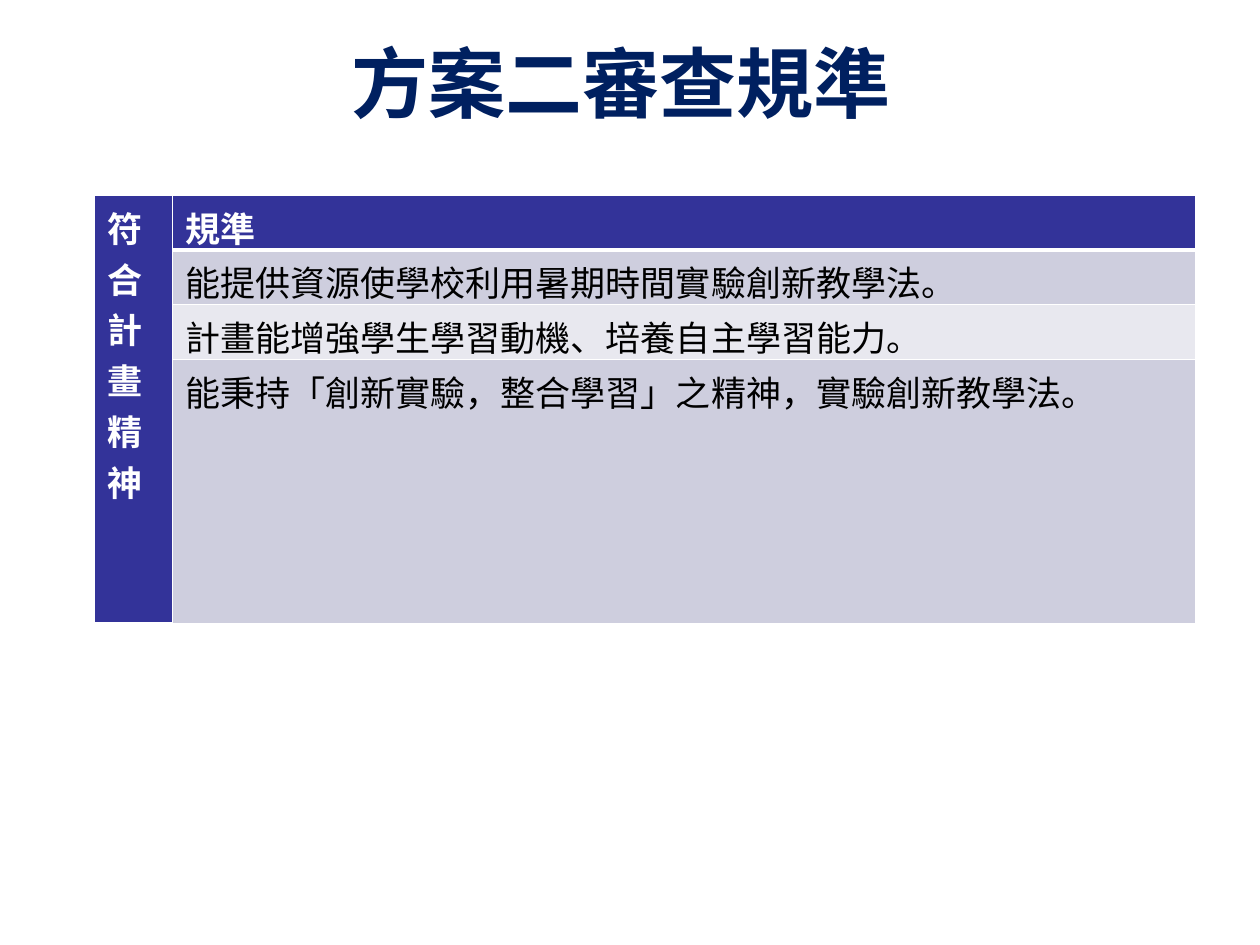
from lxml import etree
from pptx import Presentation
from pptx.dml.color import RGBColor
from pptx.enum.text import MSO_ANCHOR, PP_ALIGN
from pptx.oxml.ns import qn
from pptx.util import Inches, Pt

CENTER, MIDDLE = PP_ALIGN.CENTER, MSO_ANCHOR.MIDDLE
FONT = "Noto Sans CJK SC"
NAVY = RGBColor(0x00, 0x20, 0x60)
INDIGO = RGBColor(0x33, 0x33, 0x99)
LAVENDER = RGBColor(0xCE, 0xCE, 0xDE)
PALE = RGBColor(0xE8, 0xE8, 0xEF)
WHITE = RGBColor(0xFF, 0xFF, 0xFF)
BLACK = RGBColor(0x00, 0x00, 0x00)

# Content
TITLE = "方案二審查規準"
CATEGORY = "符合計畫精神"
HEADING = "規準"
CRITERIA = [
    "能提供資源使學校利用暑期時間實驗創新教學法。",
    "計畫能增強學生學習動機、培養自主學習能力。",
    "能秉持「創新實驗，整合學習」之精神，實驗創新教學法。",
]

# Formats
TITLE_FORMAT = {"size": Pt(44), "bold": True}
HEADER_FORMAT = {"size": Pt(20), "bold": True}
BODY_FORMAT = {"size": Pt(20), "bold": False}
COLUMN_WIDTHS = (0.62, 8.12)
HEADER_HEIGHT, CRITERION_HEIGHT = 0.39, 0.41
THIN, THICK = 1, 3


def write(frame, text, formats, color):
    run = frame.paragraphs[0].add_run()
    run.text = text
    run.font.name = FONT
    for name, value in formats.items():
        setattr(run.font, name, value)
    run.font.color.rgb = color
    east_asian = etree.SubElement(run.font._element, qn("a:ea"))
    east_asian.set("typeface", FONT)


def set_borders(cell, top, bottom):
    properties = cell._tc.get_or_add_tcPr()
    widths = {"lnL": THIN, "lnR": THIN, "lnT": top, "lnB": bottom}
    for position, (side, width) in enumerate(widths.items()):
        line = etree.Element(qn(f"a:{side}"), w=str(Pt(width)))
        fill = etree.SubElement(line, qn("a:solidFill"))
        etree.SubElement(fill, qn("a:srgbClr"), val=str(WHITE))
        properties.insert(position, line)


def fill_cell(cell, color):
    cell.fill.solid()
    cell.fill.fore_color.rgb = color


prs = Presentation()
prs.slide_width, prs.slide_height = Inches(10), Inches(7.5)
slide = prs.slides.add_slide(prs.slide_layouts[6])

# Title
title = slide.shapes.add_textbox(Inches(0.43), Inches(0.02), Inches(9), Inches(1.25))
title.text_frame.word_wrap = True
title.text_frame.vertical_anchor = MIDDLE
title.text_frame.paragraphs[0].alignment = CENTER
write(title.text_frame, TITLE, TITLE_FORMAT, NAVY)

# Criteria table
row_heights = [HEADER_HEIGHT] + [CRITERION_HEIGHT] * len(CRITERIA)
table = slide.shapes.add_table(
    len(row_heights), len(COLUMN_WIDTHS), Inches(0.75), Inches(1.55),
    Inches(sum(COLUMN_WIDTHS)), Inches(sum(row_heights))).table
for column, width in zip(table.columns, COLUMN_WIDTHS):
    column.width = Inches(width)
for row, height in zip(table.rows, row_heights):
    row.height = Inches(height)

# Category spans all rows
category = table.cell(0, 0)
category.merge(table.cell(len(CRITERIA), 0))
write(category.text_frame, CATEGORY, HEADER_FORMAT, WHITE)
fill_cell(category, INDIGO)
set_borders(category, THIN, THICK)

# Heading and banded criteria
heading = table.cell(0, 1)
write(heading.text_frame, HEADING, HEADER_FORMAT, WHITE)
fill_cell(heading, INDIGO)
set_borders(heading, THIN, THICK)
for number, criterion in enumerate(CRITERIA, start=1):
    cell = table.cell(number, 1)
    write(cell.text_frame, criterion, BODY_FORMAT, BLACK)
    fill_cell(cell, LAVENDER if number % 2 else PALE)
    set_borders(cell, THICK if number == 1 else THIN, THIN)

prs.save("out.pptx")
